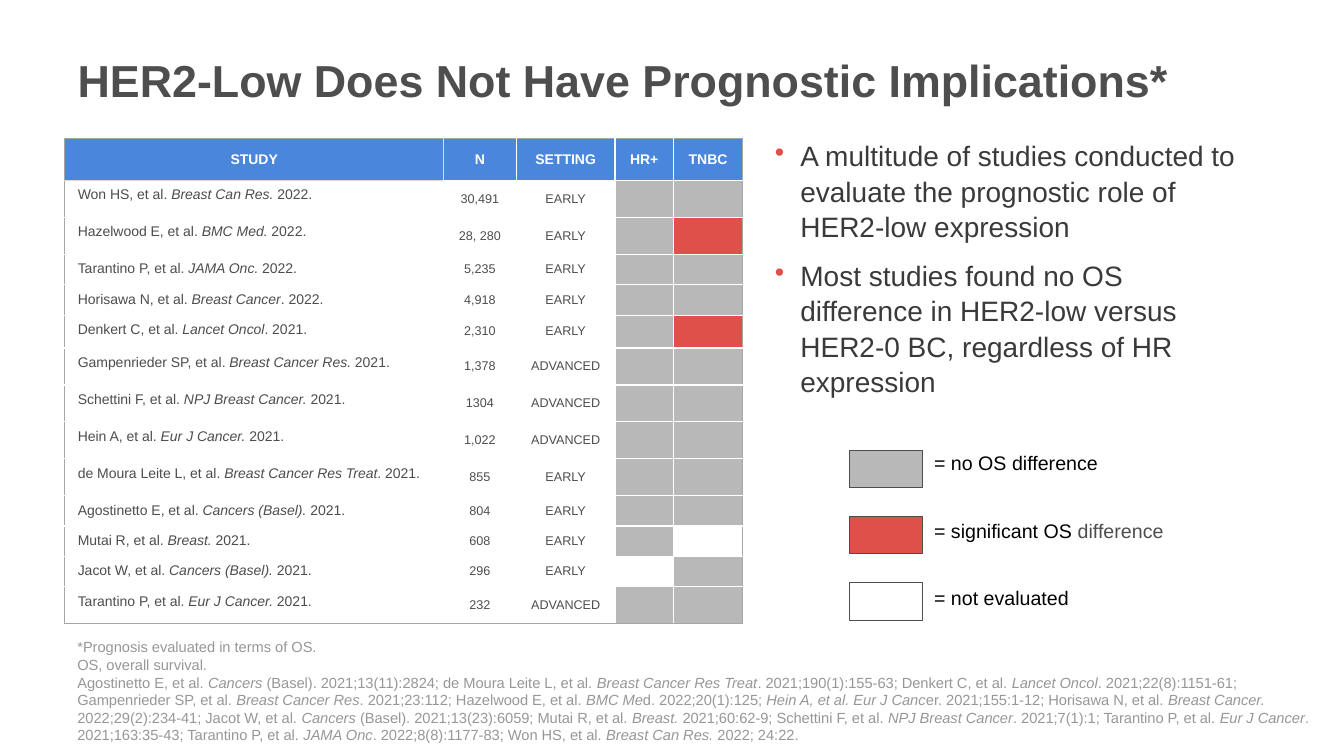
from lxml import etree
from pptx import Presentation
from pptx.dml.color import RGBColor
from pptx.enum import shapes, text
from pptx.oxml import ns
from pptx.util import Cm, Pt

FONT = "Arial"
TITLE_GREY = RGBColor(0x4D, 0x4E, 0x4D)
DARK_GREY = RGBColor(0x4D, 0x4D, 0x4D)
BODY_GREY = RGBColor(0x3A, 0x3A, 0x3A)
NOTE_GREY = RGBColor(0x97, 0x97, 0x97)
FRAME_GREY = RGBColor(0xA6, 0xA6, 0xA6)
PALE_GREY = RGBColor(0xDB, 0xDB, 0xDB)
BLUE = RGBColor(0x4A, 0x86, 0xDB)
BLACK = RGBColor(0, 0, 0)
WHITE = RGBColor(0xFF, 0xFF, 0xFF)
NO_DIFFERENCE = RGBColor(0xB8, 0xB8, 0xB8)
SIGNIFICANT = RGBColor(0xDF, 0x50, 0x4B)
OUTCOMES = {"same": NO_DIFFERENCE, "diff": SIGNIFICANT, "none": WHITE}

HEADINGS = ["STUDY", "N", "SETTING", "HR+", "TNBC"]
COLUMN_WIDTHS = [9.55, 1.83, 2.49, 1.47, 1.75]
HEADER_HEIGHT = 1.07
TALL, MEDIUM, SHORT = 0.93, 0.83, 0.75
# Journal titles between underscores are set in italics.
STUDIES = [
    ("Won HS, et al. _Breast Can Res. _2022.", "30,491", "EARLY", "same", "same", TALL),
    ("Hazelwood E, et al. _BMC Med. _2022.", "28, 280", "EARLY", "same", "diff", TALL),
    ("Tarantino P, et al. _JAMA Onc. _2022.", "5,235", "EARLY", "same", "same", SHORT),
    ("Horisawa N, et al. _Breast Cancer_. 2022.", "4,918", "EARLY", "same", "same", SHORT),
    ("Denkert C, et al. _Lancet Oncol_. 2021.", "2,310", "EARLY", "same", "diff", MEDIUM),
    ("Gampenrieder SP, et al. _Breast Cancer Res. _2021.", "1,378", "ADVANCED", "same", "same", TALL),
    ("Schettini F, et al. _NPJ Breast Cancer. _2021.", "1304", "ADVANCED", "same", "same", TALL),
    ("Hein A, et al. _Eur J Cancer. _2021.", "1,022", "ADVANCED", "same", "same", TALL),
    ("de Moura Leite L, et al. _Breast Cancer Res Treat_. 2021.", "855", "EARLY", "same", "same", TALL),
    ("Agostinetto E, et al. _Cancers (Basel). _2021.", "804", "EARLY", "same", "same", SHORT),
    ("Mutai R, et al. _Breast._ 2021.", "608", "EARLY", "same", "none", SHORT),
    ("Jacot W, et al. _Cancers (Basel). _2021.", "296", "EARLY", "none", "same", SHORT),
    ("Tarantino P, et al. _Eur J Cancer. _2021.", "232", "ADVANCED", "same", "same", TALL),
]
MESSAGES = [
    "A multitude of studies conducted to evaluate the prognostic role of HER2-low expression",
    "Most studies found no OS difference in HER2-low versus HER2-0 BC, regardless of HR expression",
]
LEGEND = [
    (NO_DIFFERENCE, [("= no OS difference", BLACK)], 4.67),
    (SIGNIFICANT, [("= significant OS ", BLACK), ("difference", DARK_GREY)], 6.32),
    (WHITE, [("= not evaluated", BLACK)], 3.91),
]
NOTES = [
    "*Prognosis evaluated in terms of OS.",
    "OS, overall survival.",
    "Agostinetto E, et al. _Cancers_ (Basel). 2021;13(11):2824; "
    "de Moura Leite L, et al. _Breast Cancer Res Treat_. 2021;190(1):155-63; "
    "Denkert C, et al. _Lancet Oncol_. 2021;22(8):1151-61; "
    "Gampenrieder SP, et al. _Breast Cancer Res_. 2021;23:112; "
    "Hazelwood E, et al. _BMC Me_d. 2022;20(1):125; "
    "_Hein A, et al. Eur J Canc_er. 2021;155:1-12; "
    "Horisawa N, et al. _Breast Cancer. _2022;29(2):234-41; "
    "Jacot W, et al. _Cancers_ (Basel). 2021;13(23):6059; "
    "Mutai R, et al. _Breast._ 2021;60:62-9; "
    "Schettini F, et al. _NPJ Breast Cancer_. 2021;7(1):1; "
    "Tarantino P, et al. _Eur J Cancer_. 2021;163:35-43; "
    "Tarantino P, et al. _JAMA Onc_. 2022;8(8):1177-83; "
    "Won HS, et al. _Breast Can Res. _2022; 24:22.",
]


def add_span(para, words, size, color, bold=False, italic=False):
    span = para.add_run()
    span.text = words
    span.font.name = FONT
    span.font.size = Pt(size)
    span.font.bold = bold
    span.font.italic = italic
    span.font.color.rgb = color


def add_citation(para, words, size, color):
    """Add words to para, with the parts between underscores in italics."""
    for index, part in enumerate(words.split("_")):
        if part:
            add_span(para, part, size, color, italic=index % 2 == 1)


def add_paragraph(frame, index):
    return frame.add_paragraph() if index else frame.paragraphs[0]


def add_text_box(page, left, top, width, height, wrap=True):
    box = page.shapes.add_textbox(Cm(left), Cm(top), Cm(width), Cm(height))
    box.text_frame.word_wrap = wrap
    return box.text_frame


def add_color(parent, color):
    fill = etree.SubElement(parent, ns.qn("a:solidFill"))
    etree.SubElement(fill, ns.qn("a:srgbClr"), val=str(color))


def set_borders(cell, left, right, top, bottom):
    properties = cell._tc.get_or_add_tcPr()
    for side, color in zip("LRTB", (left, right, top, bottom)):
        line = etree.SubElement(properties, ns.qn(f"a:ln{side}"), w=str(Pt(1)))
        add_color(line, color)


def set_margins(cell, across, down):
    cell.margin_left = cell.margin_right = Cm(across)
    cell.margin_top = cell.margin_bottom = Cm(down)


def set_title(page, words):
    title = page.shapes.title
    title.left, title.top, title.width, title.height = Cm(1.7), Cm(0.56), Cm(29.85), Cm(2.87)
    title.text_frame.vertical_anchor = text.MSO_ANCHOR.MIDDLE
    para = title.text_frame.paragraphs[0]
    para.alignment = text.PP_ALIGN.LEFT
    add_span(para, words, 32, TITLE_GREY, bold=True)


def center_text(cell, words, size, color, bold=False):
    cell.vertical_anchor = text.MSO_ANCHOR.MIDDLE
    set_margins(cell, 0.28, 0.15)
    para = cell.text_frame.paragraphs[0]
    para.alignment = text.PP_ALIGN.CENTER
    add_span(para, words, size, color, bold)


def frame_cell(cell, row, column):
    """Grey outer frame, white inner lines, pale lines around the first heading."""
    last_row, last_column = len(STUDIES), len(HEADINGS) - 1
    left = FRAME_GREY if column == 0 else WHITE
    right = FRAME_GREY if column == last_column else WHITE
    top = FRAME_GREY if row == 0 else WHITE
    bottom = FRAME_GREY if row == last_row else WHITE
    if (row, column) == (0, 0):
        right = bottom = PALE_GREY
    elif (row, column) == (0, 1):
        left = PALE_GREY
    elif (row, column) == (1, 0):
        top = PALE_GREY
    set_borders(cell, left, right, top, bottom)


def fill_cell(cell, row, column):
    frame_cell(cell, row, column)
    if row == 0:
        cell.fill.solid()
        cell.fill.fore_color.rgb = BLUE
        center_text(cell, HEADINGS[column], 10, WHITE, bold=True)
        return
    value = STUDIES[row - 1][column]
    if value in OUTCOMES:
        set_margins(cell, 0, 0)
        cell.fill.solid()
        cell.fill.fore_color.rgb = OUTCOMES[value]
        return
    cell.fill.background()
    if column == 0:
        set_margins(cell, 0.33, 0.17)
        add_citation(cell.text_frame.paragraphs[0], value, 10, DARK_GREY)
    else:
        center_text(cell, value, 9, DARK_GREY)


def add_study_table(page):
    heights = [HEADER_HEIGHT] + [study[-1] for study in STUDIES]
    table = page.shapes.add_table(len(heights), len(HEADINGS), Cm(1.63), Cm(3.48),
                                  Cm(sum(COLUMN_WIDTHS)), Cm(sum(heights))).table
    table.first_row = table.horz_banding = False
    for column, width in enumerate(COLUMN_WIDTHS):
        table.columns[column].width = Cm(width)
    for row, height in enumerate(heights):
        table.rows[row].height = Cm(height)
        for column in range(len(HEADINGS)):
            fill_cell(table.cell(row, column), row, column)


def add_messages(page):
    frame = add_text_box(page, 19.28, 3.33, 12.34, 7.34)
    for index, message in enumerate(MESSAGES):
        para = add_paragraph(frame, index)
        properties = para._p.get_or_add_pPr()
        properties.set("marL", str(Cm(0.64)))
        properties.set("indent", str(Cm(-0.64)))
        add_color_holder = etree.SubElement(properties, ns.qn("a:buClr"))
        etree.SubElement(add_color_holder, ns.qn("a:srgbClr"), val=str(SIGNIFICANT))
        etree.SubElement(properties, ns.qn("a:buChar"), char="•")
        para.line_spacing = 1.05
        para.space_before = Pt(10 if index else 0)
        add_span(para, message, 20, BODY_GREY)


def add_legend(page):
    for index, (color, parts, width) in enumerate(LEGEND):
        swatch = page.shapes.add_shape(shapes.MSO_SHAPE.RECTANGLE, Cm(21.41),
                                       Cm(11.35 + 1.67 * index), Cm(1.83), Cm(0.94))
        swatch.shadow.inherit = False
        swatch.fill.solid()
        swatch.fill.fore_color.rgb = color
        swatch.line.color.rgb = DARK_GREY
        swatch.line.width = Pt(0.75)
        label = add_text_box(page, 23.29, 11.25 + 1.69 * index, width, 0.86, wrap=False)
        for words, ink in parts:
            add_span(label.paragraphs[0], words, 14, ink)


def add_notes(page):
    frame = add_text_box(page, 1.7, 17.65, 31.9, 1.22)
    frame.vertical_anchor = text.MSO_ANCHOR.BOTTOM
    for index, note in enumerate(NOTES):
        add_citation(add_paragraph(frame, index), note, 10.5, NOTE_GREY)


def main():
    deck = Presentation()
    deck.slide_width, deck.slide_height = Cm(33.87), Cm(19.05)
    page = deck.slides.add_slide(deck.slide_layouts[5])
    set_title(page, "HER2-Low Does Not Have Prognostic Implications*")
    add_notes(page)
    add_legend(page)
    add_study_table(page)
    add_messages(page)
    deck.save("out.pptx")


if __name__ == "__main__":
    main()
